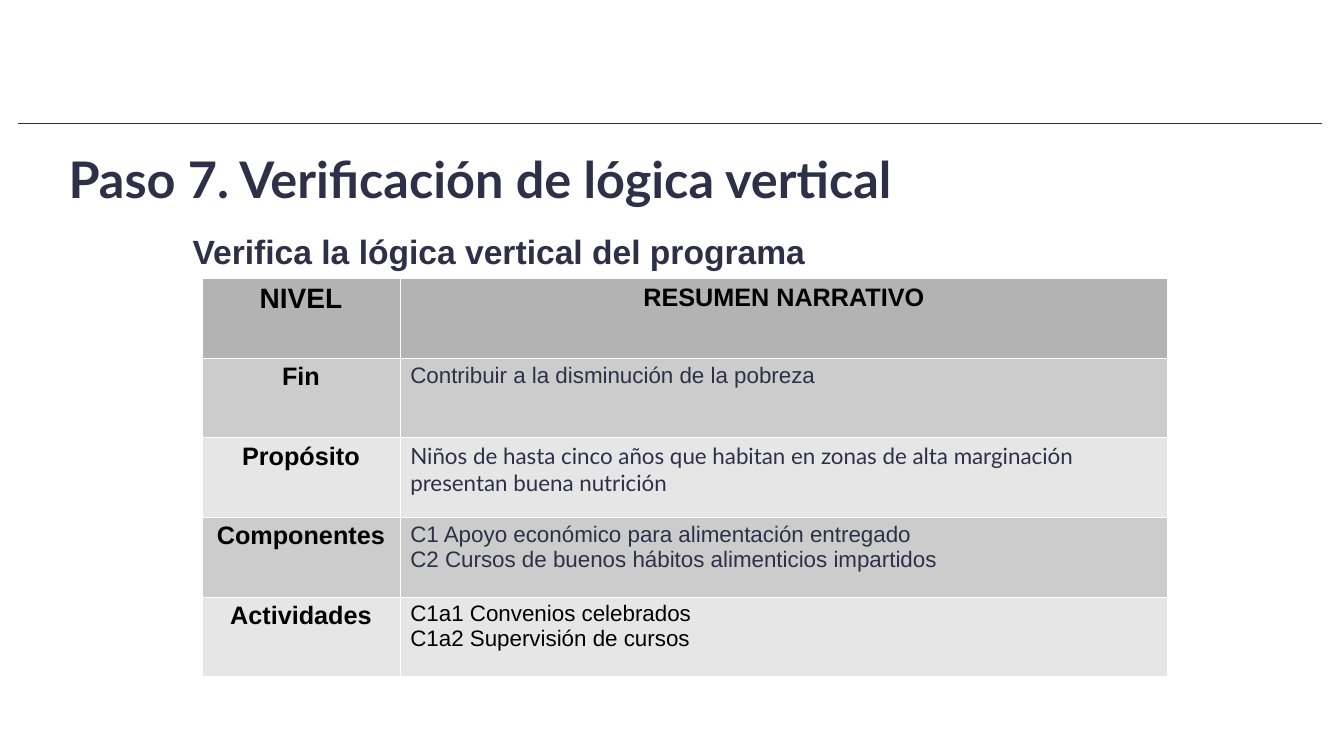
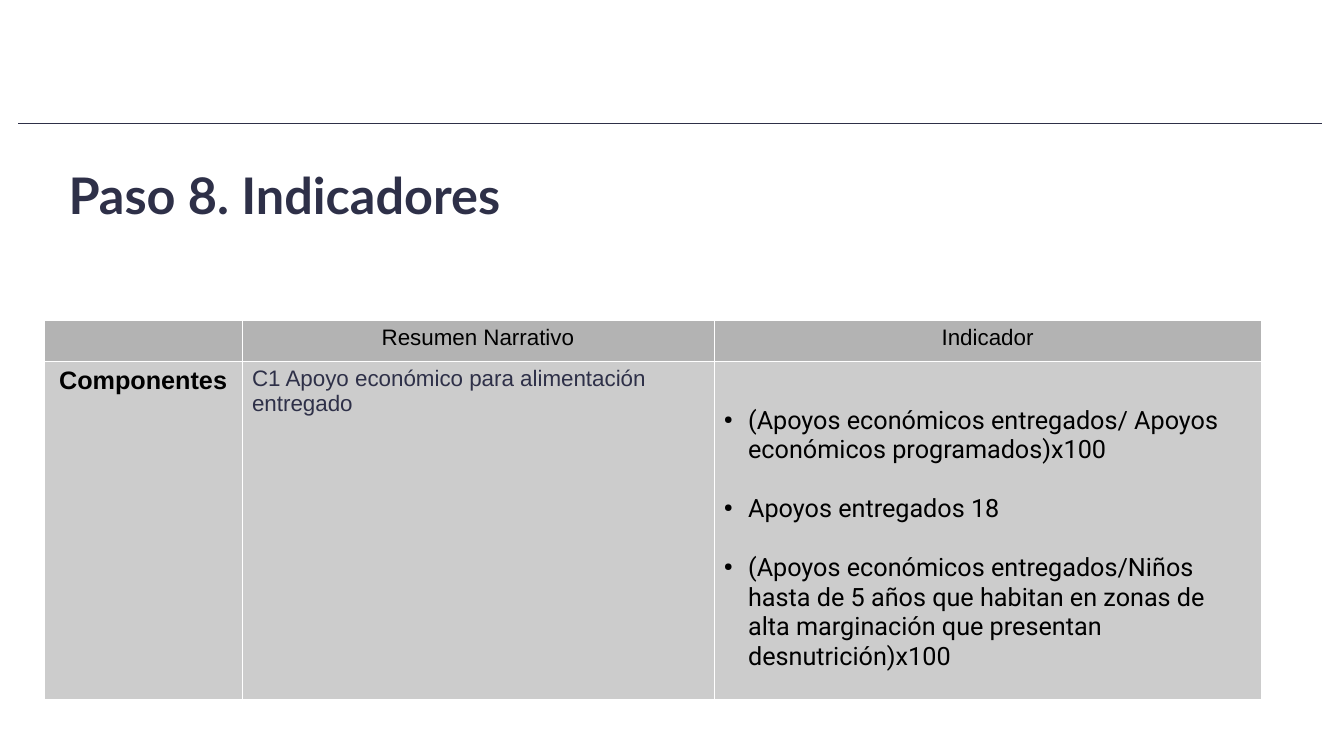
from lxml.etree import SubElement
from pptx import Presentation
from pptx.dml.color import RGBColor
from pptx.enum.shapes import MSO_CONNECTOR as Connector
from pptx.enum.text import MSO_ANCHOR as Anchor, MSO_AUTO_SIZE as AutoSize, PP_ALIGN as Align
from pptx.oxml.ns import qn
from pptx.util import Inches, Pt

NAVY = RGBColor(0x2E, 0x30, 0x48)
BLACK = RGBColor(0x00, 0x00, 0x00)
WHITE = RGBColor(0xFF, 0xFF, 0xFF)
HEADER_GREY = RGBColor(0xB3, 0xB3, 0xB3)
BAND_GREYS = (RGBColor(0xCC, 0xCC, 0xCC), RGBColor(0xE6, 0xE6, 0xE6))

TITLE_ONLY, TITLE_AND_CONTENT = 5, 1

STYLES = {
    "title": ("Lato", 36, True, NAVY, Align.LEFT),
    "subtitle": ("Arial", 24, True, NAVY, Align.LEFT),
    "big header": ("Arial", 20, True, BLACK, Align.CENTER),
    "label": ("Arial", 18, True, BLACK, Align.CENTER),
    "plain header": ("Arial", 16, False, BLACK, Align.CENTER),
    "summary": ("Arial", 16, False, NAVY, Align.LEFT),
    "purpose": ("Lato", 16, False, NAVY, Align.LEFT),
    "activity": ("Arial", 16, False, BLACK, Align.LEFT),
    "indicator": ("Roboto", 18, False, BLACK, Align.LEFT),
}

LOGIC_SUBTITLE = "Verifica la lógica vertical del programa"
LOGIC_ROWS = [
    [("big header", ["NIVEL"]), ("label", ["RESUMEN NARRATIVO"])],
    [("label", ["Fin"]), ("summary", ["Contribuir a la disminución de la pobreza"])],
    [("label", ["Propósito"]),
     ("purpose", ["Niños de hasta cinco años que habitan en zonas de alta marginación "
                  "presentan buena nutrición"])],
    [("label", ["Componentes"]),
     ("summary", ["C1 Apoyo económico para alimentación entregado",
                  "C2 Cursos de buenos hábitos alimenticios impartidos"])],
    [("label", ["Actividades"]),
     ("activity", ["C1a1 Convenios celebrados", "C1a2 Supervisión de cursos"])],
]
INDICATOR_ROWS = [
    [("plain header", []), ("plain header", ["Resumen Narrativo"]),
     ("plain header", ["Indicador"])],
    [("label", ["Componentes"]),
     ("summary", ["C1 Apoyo económico para alimentación entregado"]),
     ("indicator", ["(Apoyos económicos entregados/ Apoyos económicos programados)x100",
                    "Apoyos entregados 18",
                    "(Apoyos económicos entregados/Niños hasta de 5 años que habitan en "
                    "zonas de alta marginación que presentan desnutrición)x100"])],
]


def place(shape, left, top, width, height):
    shape.left, shape.top = Inches(left), Inches(top)
    shape.width, shape.height = Inches(width), Inches(height)


def add_color(parent, color):
    SubElement(parent, qn("a:srgbClr"), val=str(color))


def add_bullet(para):
    props = para._p.get_or_add_pPr()
    props.set("marL", str(Inches(0.24)))
    props.set("indent", str(-Inches(0.24)))
    add_color(SubElement(props, qn("a:buClr")), BLACK)
    SubElement(props, qn("a:buSzPct"), val="45000")
    SubElement(props, qn("a:buChar"), char="●")


def write(frame, lines, style, bulleted=False, gap=0):
    name, size, bold, color, align = STYLES[style]
    frame.text = "\n".join(lines)
    for index, para in enumerate(frame.paragraphs):
        if bulleted:
            add_bullet(para)
        para.alignment = align
        para.space_before = Pt(gap if index else 0)
        for span in para.runs:
            font = span.font
            font.name, font.size, font.bold = name, Pt(size), bold
            font.color.rgb = color


def add_borders(cell):
    props = cell._tc.get_or_add_tcPr()
    for side in ("lnL", "lnR", "lnT", "lnB"):
        border = SubElement(props, qn(f"a:{side}"), w=str(Pt(0.06)))
        add_color(SubElement(border, qn("a:solidFill")), WHITE)


def add_table(page, rows, left, top, widths, heights):
    frame = page.shapes.add_table(len(rows), len(widths), Inches(left), Inches(top),
                                  Inches(sum(widths)), Inches(sum(heights)))
    table = frame.table
    for column, width in zip(table.columns, widths):
        column.width = Inches(width)
    for row, height in zip(table.rows, heights):
        row.height = Inches(height)
    for r, row in enumerate(rows):
        for c, (style, lines) in enumerate(row):
            cell = table.cell(r, c)
            add_borders(cell)
            cell.fill.solid()
            cell.fill.fore_color.rgb = BAND_GREYS[(r - 1) % 2] if r else HEADER_GREY
            listed = style == "indicator"
            if listed:
                cell.margin_top = Inches(0.44)
            if lines:
                write(cell.text_frame, lines, style, listed, 21 if listed else 0)


def add_page(deck, layout, title, title_top):
    page = deck.slides.add_slide(deck.slide_layouts[layout])
    box = page.shapes.title
    place(box, 0.58, title_top, 12.13, 1.13)
    write(box.text_frame, [title], "title")
    box.text_frame.auto_size = AutoSize.NONE
    box.text_frame.vertical_anchor = Anchor.MIDDLE
    box.text_frame.paragraphs[0].line_spacing = 0.9
    return page


def move_rule_to_master(deck, page):
    rule = page.shapes.add_connector(Connector.STRAIGHT, Inches(0.18), Inches(1.23),
                                     Inches(13.11), Inches(1.23))
    rule.line.color.rgb = NAVY
    rule.line.width = Pt(0.75)
    SubElement(rule.element.spPr, qn("a:effectLst"))
    rule.element.nvCxnSpPr.cNvPr.set("id", "20")
    deck.slide_master.shapes.element.append(rule.element)


def main():
    deck = Presentation()
    deck.slide_width, deck.slide_height = Inches(13.33), Inches(7.5)

    logic = add_page(deck, TITLE_AND_CONTENT, "Paso 7. Verificación de lógica vertical", 1.24)
    move_rule_to_master(deck, logic)
    subtitle = logic.placeholders[1]
    place(subtitle, 1.81, 2.24, 9.93, 0.51)
    write(subtitle.text_frame, [LOGIC_SUBTITLE], "subtitle")
    subtitle.text_frame.auto_size = AutoSize.NONE
    props = subtitle.text_frame.paragraphs[0]._p.get_or_add_pPr()
    props.set("marL", "0")
    props.set("indent", "0")
    SubElement(props, qn("a:buNone"))
    add_table(logic, LOGIC_ROWS, 2, 2.76, (1.97, 7.61), [0.79] * len(LOGIC_ROWS))

    indicators = add_page(deck, TITLE_ONLY, "Paso 8. Indicadores", 1.4)
    add_table(indicators, INDICATOR_ROWS, 0.44, 3.18, (1.96, 4.68, 5.43), (0.38, 3.35))

    deck.save("out.pptx")


if __name__ == "__main__":
    main()
